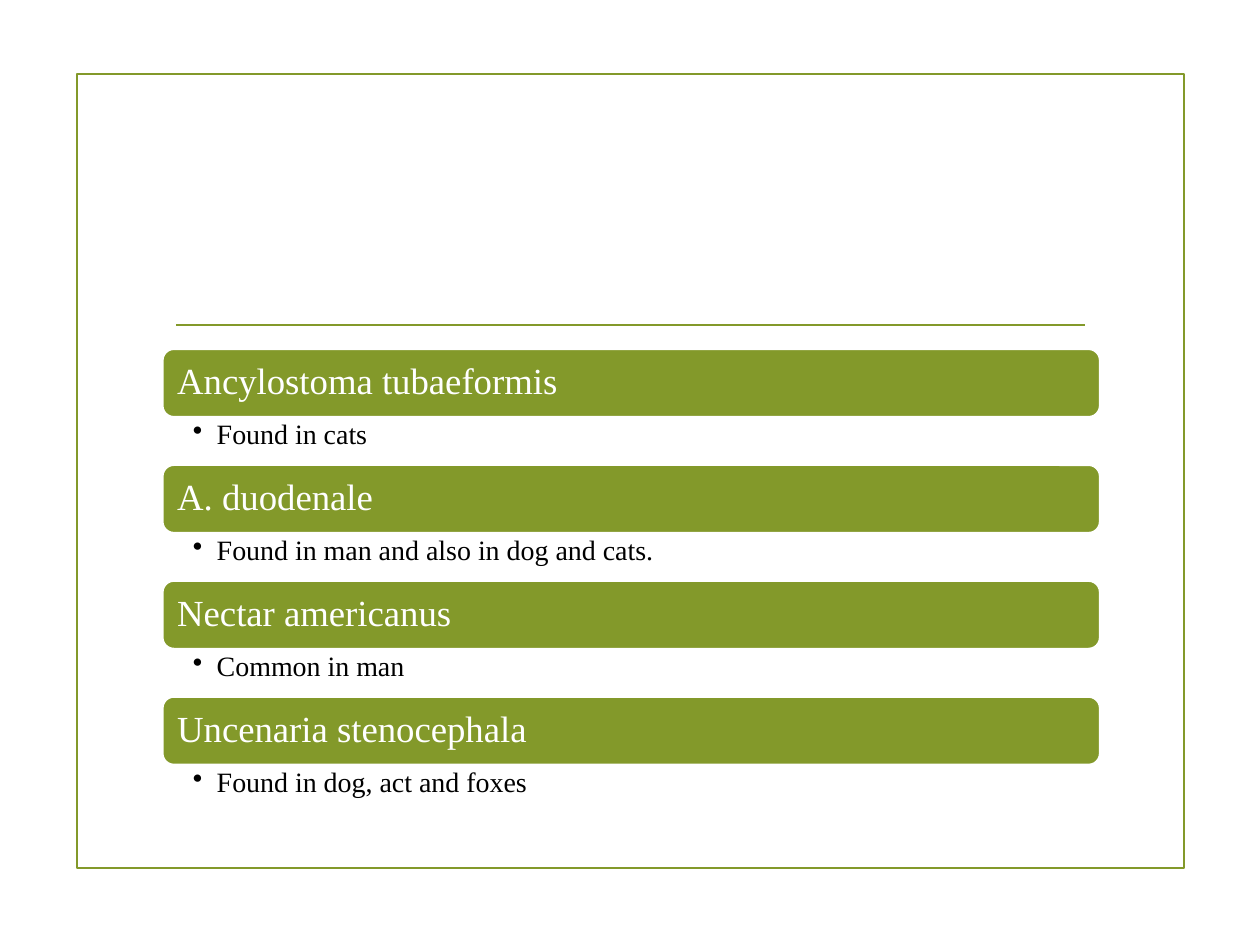
import pptx
import pptx.dml.color
import pptx.enum.shapes
import pptx.enum.text
import pptx.oxml
import pptx.oxml.ns
import pptx.util
from pptx.util import Inches

GREEN = pptx.dml.color.RGBColor(0x83, 0x99, 0x2A)
WHITE = pptx.dml.color.RGBColor(0xFF, 0xFF, 0xFF)
BLACK = pptx.dml.color.RGBColor(0x00, 0x00, 0x00)
FONT = "Times New Roman"
LINE_WIDTH = pptx.util.Pt(1.25)
SHAPES = pptx.enum.shapes.MSO_SHAPE

SPECIES = [
    ("Ancylostoma tubaeformis", "Found in cats"),
    ("A. duodenale", "Found in man and also in dog and cats."),
    ("Nectar americanus", "Common in man"),
    ("Uncenaria stenocephala", "Found in dog, act and foxes"),
]


def set_insets(tf, left, top, right, bottom):
    tf.margin_left, tf.margin_top = Inches(left), Inches(top)
    tf.margin_right, tf.margin_bottom = Inches(right), Inches(bottom)


def add_text(p, text, size, color):
    p.alignment = pptx.enum.text.PP_ALIGN.LEFT
    p.line_spacing = 0.9
    r = p.add_run()
    r.text = text
    r.font.name = FONT
    r.font.size = pptx.util.Pt(size)
    r.font.color.rgb = color


def add_bullet(p, indent):
    pPr = p._p.get_or_add_pPr()
    pPr.set("marL", str(Inches(indent)))
    pPr.set("indent", str(-Inches(indent)))
    bullet = pptx.oxml.parse_xml(
        f'<a:buChar {pptx.oxml.ns.nsdecls("a")} char="•"/>')
    pPr.append(bullet)


def add_frame(s, left, top, width, height):
    frame = s.shapes.add_shape(SHAPES.RECTANGLE, left, top, width, height)
    frame.shadow.inherit = False
    frame.fill.background()
    frame.line.color.rgb = GREEN
    frame.line.width = LINE_WIDTH


def add_rule(s, left, top, width):
    rule = s.shapes.add_connector(
        pptx.enum.shapes.MSO_CONNECTOR.STRAIGHT, left, top, left + width, top)
    rule.line.color.rgb = GREEN
    rule.line.width = LINE_WIDTH
    rule._element.spPr.append(
        pptx.oxml.parse_xml(f'<a:effectLst {pptx.oxml.ns.nsdecls("a")}/>'))


def add_heading(s, text, left, top, width, height):
    sp = s.shapes.add_shape(SHAPES.ROUNDED_RECTANGLE, left, top, width, height)
    sp.shadow.inherit = False
    sp.fill.solid()
    sp.fill.fore_color.rgb = GREEN
    sp.line.color.rgb = WHITE
    sp.line.width = LINE_WIDTH
    tf = sp.text_frame
    tf.word_wrap = True
    tf.vertical_anchor = pptx.enum.text.MSO_ANCHOR.MIDDLE
    set_insets(tf, 0.09, 0.09, 0.09, 0.09)
    add_text(tf.paragraphs[0], text, 21, WHITE)


def add_detail(s, text, left, top, width, height):
    tf = s.shapes.add_textbox(left, top, width, height).text_frame
    tf.word_wrap = True
    set_insets(tf, 0.24, 0.03, 0.16, 0.03)
    p = tf.paragraphs[0]
    add_bullet(p, 0.19)
    add_text(p, text, 16, BLACK)


def add_species_list(s, left, top, width, height):
    pitch = height // len(SPECIES)
    heading_height = Inches(0.54)
    for i, (name, host) in enumerate(SPECIES):
        y = top + i * pitch
        add_heading(s, name, left, y, width, heading_height)
        add_detail(s, host, left, y + heading_height, width,
                   pitch - heading_height)


def main():
    prs = pptx.Presentation()
    prs.slide_width, prs.slide_height = Inches(10), Inches(7.5)
    s = prs.slides.add_slide(prs.slide_layouts[6])
    add_frame(s, Inches(0.61), Inches(0.59), Inches(8.79), Inches(6.3))
    add_rule(s, Inches(1.4), Inches(2.58), Inches(7.21))
    add_species_list(s, Inches(1.29), Inches(2.77), Inches(7.44), Inches(3.68))
    prs.save("out.pptx")


if __name__ == "__main__":
    main()
